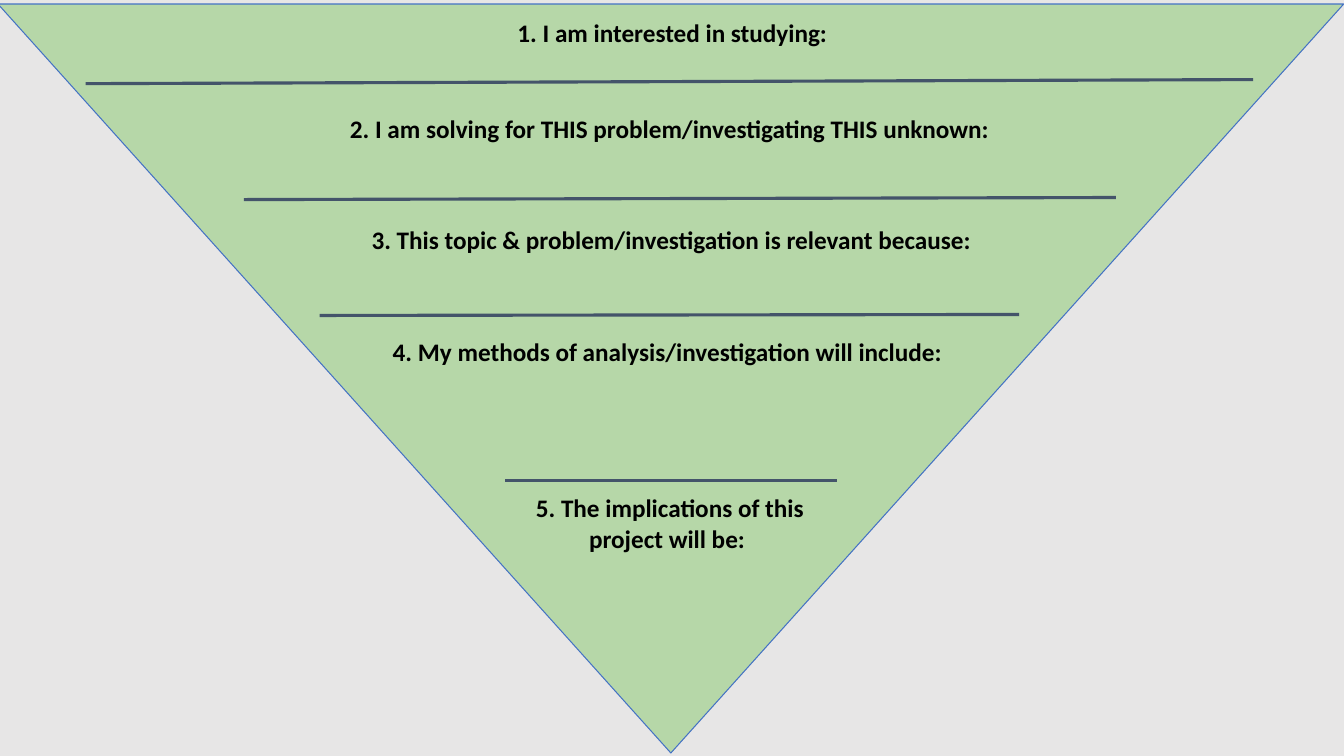
from pptx import Presentation, util as u
from pptx.dml.color import RGBColor
from pptx.enum import shapes, text
from pptx.oxml import ns, xmlchemy

GREY = RGBColor(0xE7, 0xE6, 0xE6)
GREEN = RGBColor(0xB6, 0xD7, 0xA8)
BLUE = RGBColor(0x44, 0x72, 0xC4)
SLATE = RGBColor(0x44, 0x54, 0x6A)
BLACK = RGBColor(0, 0, 0)

deck = Presentation()
deck.slide_width, deck.slide_height = u.Inches(13.33), u.Inches(7.5)
page = deck.slides.add_slide(deck.slide_layouts[6])
page.background.fill.solid()
page.background.fill.fore_color.rgb = GREY


def share(*percents):
    """Turn alternating x and y percentages of the slide into lengths."""
    sides = (deck.slide_width, deck.slide_height)
    return [round(sides[i % 2] * p / 100) for i, p in enumerate(percents)]


# Inverted triangle
funnel = page.shapes.add_shape(shapes.MSO_SHAPE.ISOSCELES_TRIANGLE,
                               *share(-0.15, 0.53, 100.13, 99.07))
funnel.rotation = 180
funnel.adjustments[0] = 0.5
funnel.shadow.inherit = False
funnel.fill.solid()
funnel.fill.fore_color.rgb = GREEN
funnel.line.color.rgb = BLUE
funnel.line.width = u.Pt(0.75)

# Dividers: start x, start y, end x, end y
dividers = [
    (6.38, 11.07, 93.23, 10.53),
    (18.15, 26.4, 83.03, 26.13),
    (23.78, 41.73, 75.83, 41.6),
    (37.58, 63.6, 62.25, 63.6),
]
for ends in dividers:
    divider = page.shapes.add_connector(shapes.MSO_CONNECTOR.STRAIGHT, *share(*ends))
    divider.line.color.rgb = SLATE
    divider.line.width = u.Pt(2.25)
    divider._element.spPr.append(xmlchemy.OxmlElement("a:effectLst"))

# Prompts: left, top, width, height, wording
prompts = [
    (2.33, 1.6, 95.4, 9.47, "1. I am interested in studying:"),
    (9.38, 14.27, 81.3, 5.33,
     "2. I am solving for THIS problem/investigating THIS unknown: "),
    (19.95, 29.07, 60, 5.33,
     "3. This topic & problem/investigation is relevant because:"),
    (28.2, 43.87, 43.35, 5.33,
     "4. My methods of analysis/investigation will include: "),
    (36.23, 64.53, 27.23, 17.47, "5. The implications of this project will be: "),
]
font_format = {"name": "Calibri", "size": u.Pt(18), "bold": True}
for *place, wording in prompts:
    box = page.shapes.add_textbox(*share(*place))
    box.text_frame.word_wrap = True
    box.text_frame.auto_size = text.MSO_AUTO_SIZE.SHAPE_TO_FIT_TEXT
    para = box.text_frame.paragraphs[0]
    para.alignment = text.PP_ALIGN.CENTER
    span = para.add_run()
    span.text = wording
    for key, value in font_format.items():
        setattr(span.font, key, value)
    span.font.color.rgb = BLACK

deck.save("out.pptx")
